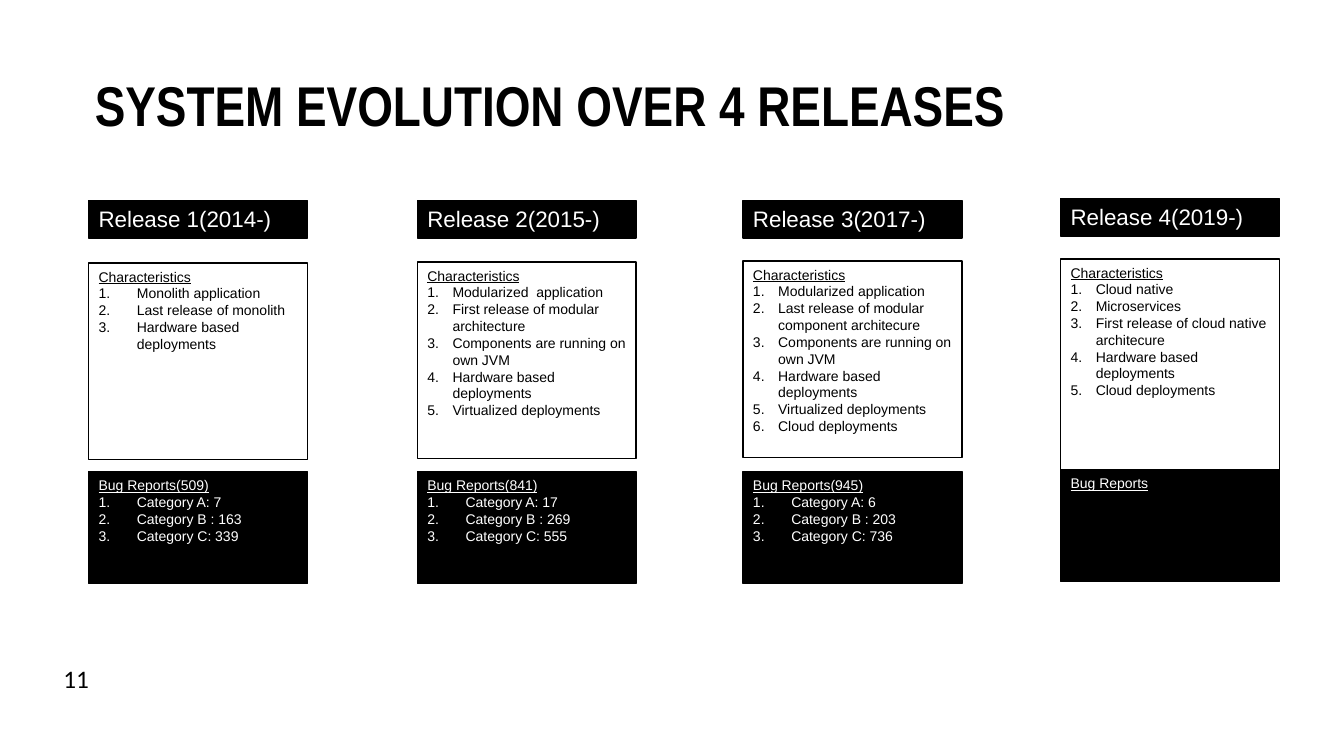
from pptx import Presentation
from pptx.dml.color import RGBColor
from pptx.enum.shapes import MSO_SHAPE
from pptx.enum.text import MSO_ANCHOR, MSO_AUTO_SIZE, PP_ALIGN
from pptx.oxml.ns import qn
from pptx.util import Pt
from lxml.etree import SubElement

BLACK, WHITE = "000000", "FFFFFF"
WIDE, NARROW = 38, 25
COL_W = 217

RELEASES = [
    dict(x=88, y=199, gap=62, tall=195, name="Release 1(2014-)", indent=WIDE,
         traits=["Monolith application", "Last release of monolith",
                 "Hardware based deployments"],
         bugs="Bug Reports(509)",
         counts=["Category A: 7", "Category B : 163", "Category C: 339"]),
    dict(x=414, y=199, gap=61, tall=195, name="Release 2(2015-)", indent=NARROW,
         traits=["Modularized  application", "First release of modular architecture",
                 "Components are running on own JVM", "Hardware based deployments",
                 "Virtualized deployments"],
         bugs="Bug Reports(841)",
         counts=["Category A: 17", "Category B : 269", "Category C: 555"]),
    dict(x=737, y=199, gap=60, tall=195, name="Release 3(2017-)", indent=NARROW,
         traits=["Modularized application", "Last release of modular component architecure",
                 "Components are running on own JVM", "Hardware based deployments",
                 "Virtualized deployments", "Cloud deployments"],
         bugs="Bug Reports(945)",
         counts=["Category A: 6", "Category B : 203", "Category C: 736"]),
    dict(x=1052, y=197, gap=60, tall=212, name="Release 4(2019-)", indent=NARROW,
         traits=["Cloud native", "Microservices", "First release of cloud native architecure",
                 "Hardware based deployments", "Cloud deployments"],
         bugs="Bug Reports", counts=[]),
]


def px(n):
    return n * 9144


def color(code):
    return RGBColor.from_string(code)


def write(para, text, size=10, font="Arial", ink=BLACK, bold=False, under=False, indent=0):
    para.alignment = PP_ALIGN.LEFT
    if indent:
        props = para._p.get_or_add_pPr()
        props.set("marL", str(px(indent)))
        props.set("indent", str(-px(indent)))
        SubElement(props, qn("a:buAutoNum"), type="arabicPeriod")
    run = para.add_run()
    run.text = text
    face = run.font
    face.size, face.name = Pt(size), font
    face.bold, face.underline = bold, under
    face.color.rgb = color(ink)


def panel(slide, x, y, w, h, fill):
    box = slide.shapes.add_shape(MSO_SHAPE.RECTANGLE, px(x), px(y), px(w), px(h))
    box.shadow.inherit = False
    box.fill.solid()
    box.fill.fore_color.rgb = color(fill)
    box.line.color.rgb = color(BLACK)
    box.line.width = Pt(1)
    frame = box.text_frame
    frame.word_wrap = True
    frame.vertical_anchor = MSO_ANCHOR.TOP
    return frame


def listing(frame, head, items, ink, indent):
    write(frame.paragraphs[0], head, ink=ink, under=True)
    for item in items:
        write(frame.add_paragraph(), item, ink=ink, indent=indent)


def column(slide, x, y, gap, tall, name, indent, traits, bugs, counts):
    top = panel(slide, x, y, COL_W, 37, BLACK)
    write(top.paragraphs[0], name, size=16, ink=WHITE)
    body = panel(slide, x, y + gap, COL_W, tall, WHITE)
    listing(body, "Characteristics", traits, BLACK, indent)
    base = panel(slide, x, y + 269, COL_W, 111, BLACK)
    listing(base, bugs, counts, WHITE, WIDE)


def heading(slide, x, y, w, h):
    title = slide.shapes.title
    title.left, title.top, title.width, title.height = px(x), px(y), px(w), px(h)
    frame = title.text_frame
    frame.word_wrap = True
    frame.auto_size = MSO_AUTO_SIZE.NONE
    frame.vertical_anchor = MSO_ANCHOR.TOP
    para = frame.paragraphs[0]
    para.line_spacing = 0.9
    write(para, "SYSTEM EVOLUTION OVER 4 RELEASES", size=40, font="Arial Narrow", bold=True)


def number(slide, x, y, w, h):
    frame = slide.shapes.add_textbox(px(x), px(y), px(w), px(h)).text_frame
    frame.word_wrap = True
    write(frame.paragraphs[0], "11", size=18, font="Calibri")


def main():
    deck = Presentation()
    deck.slide_width, deck.slide_height = px(1333), px(750)
    slide = deck.slides.add_slide(deck.slide_layouts[5])
    heading(slide, 84, 72, 1041, 125)
    for release in RELEASES:
        column(slide, **release)
    number(slide, 53, 653, 50, 40)
    deck.save("out.pptx")


if __name__ == "__main__":
    main()
